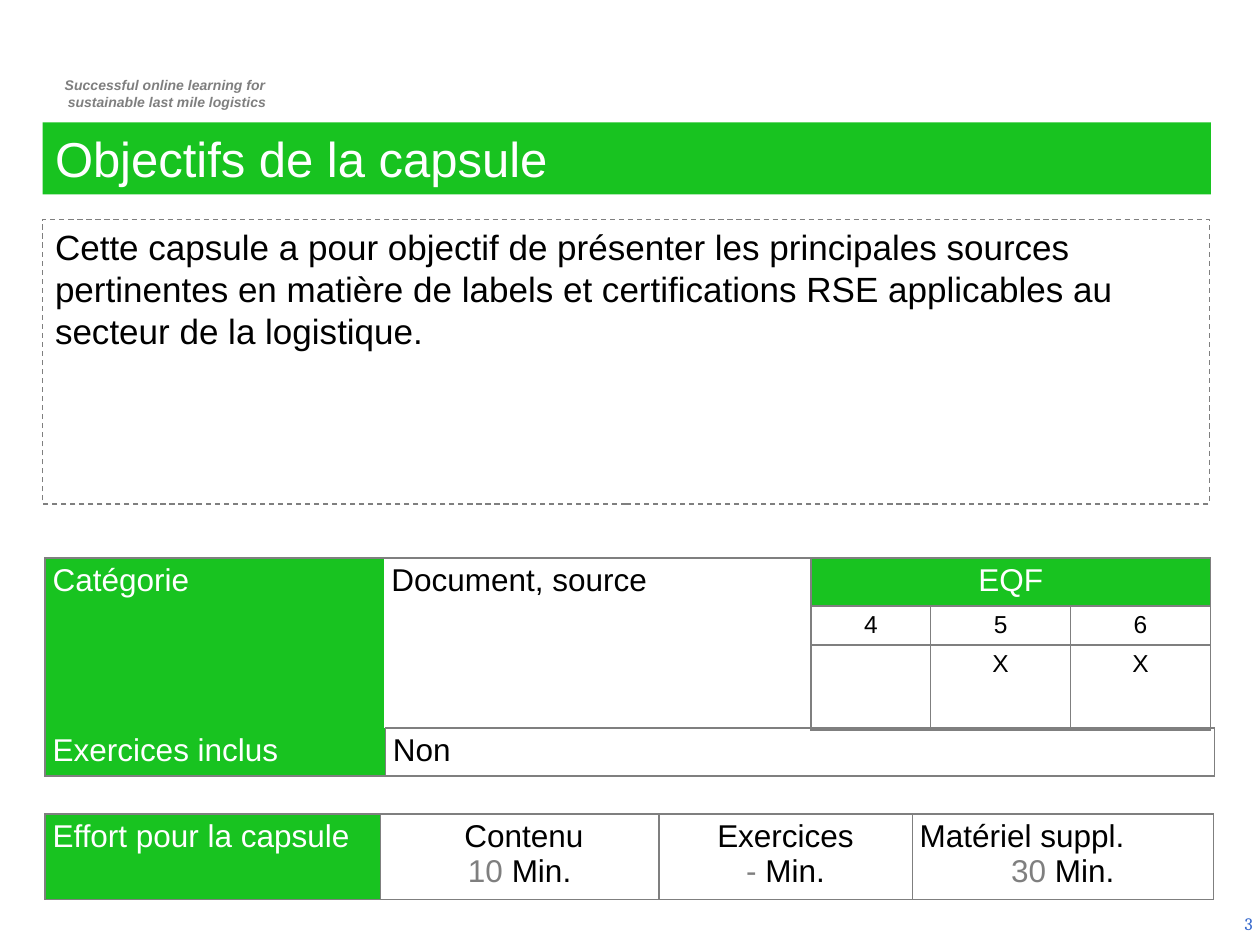
import dataclasses
import typing

import lxml.etree
import pptx
import pptx.dml.color
import pptx.enum.dml
import pptx.enum.shapes
import pptx.enum.text
import pptx.oxml
import pptx.oxml.ns
import pptx.util

Cm = pptx.util.Cm
Align = pptx.enum.text.PP_ALIGN
Anchor = pptx.enum.text.MSO_ANCHOR
qn = pptx.oxml.ns.qn


@dataclasses.dataclass(frozen=True)
class Theme:
    green: str = "18C320"
    white: str = "FFFFFF"
    black: str = "000000"
    grey: str = "7F7F7F"
    blue: str = "3366CC"
    font: str = "Arial"
    number_font: str = "Cambria"
    title: float = 28
    body: float = 20
    table: float = 18
    level: float = 14
    number: float = 10
    motto: float = 8
    plain_table: str = "{2D5ABB26-0587-4C30-8999-92F81FD0307C}"


THEME = Theme()


class Span(typing.NamedTuple):
    text: str
    color: str


class Line(typing.NamedTuple):
    spans: list[Span]
    align: Align = Align.CENTER


@dataclasses.dataclass
class Entry:
    row: int
    column: int
    lines: list[Line]
    size: float = THEME.table
    fill: str | None = None
    borders: str = "LRTB"
    row_span: int = 1
    column_span: int = 1


def rgb(value: str) -> pptx.dml.color.RGBColor:
    return pptx.dml.color.RGBColor.from_string(value)


def line(text: str, color: str = THEME.black, align: Align = Align.CENTER) -> Line:
    return Line([Span(text, color)], align)


def write(frame, lines: list[Line], *, size: float, font: str = THEME.font,
          bold: bool = False, italic: bool = False) -> None:
    """Fill a text frame with formatted paragraphs."""
    for index, item in enumerate(lines):
        para = frame.paragraphs[0] if index == 0 else frame.add_paragraph()
        para.alignment = item.align
        for part in item.spans:
            span = para.add_run()
            span.text = part.text
            span.font.name, span.font.size = font, pptx.util.Pt(size)
            span.font.bold, span.font.italic = bold, italic
            span.font.color.rgb = rgb(part.color)


def add_text_box(page, left: float, top: float, width: float, height: float,
                 lines: list[Line], anchor: Anchor = Anchor.TOP, **style) -> None:
    box = page.shapes.add_textbox(Cm(left), Cm(top), Cm(width), Cm(height))
    box.text_frame.word_wrap = True
    box.text_frame.vertical_anchor = anchor
    write(box.text_frame, lines, **style)


def add_panel(page, left: float, top: float, width: float, height: float,
              lines: list[Line], fill: str | None = None, **style) -> None:
    """Draw a filled rectangle, or a dashed outline when no fill is given."""
    box = page.shapes.add_shape(pptx.enum.shapes.MSO_SHAPE.RECTANGLE,
                                Cm(left), Cm(top), Cm(width), Cm(height))
    box.shadow.inherit = False
    if fill:
        box.fill.solid()
        box.fill.fore_color.rgb = rgb(fill)
        box.line.fill.background()
    else:
        box.fill.background()
        box.line.color.rgb = rgb(THEME.grey)
        box.line.width = pptx.util.Pt(0.75)
        box.line.dash_style = pptx.enum.dml.MSO_LINE.DASH
    box.text_frame.word_wrap = True
    box.text_frame.vertical_anchor = Anchor.TOP
    write(box.text_frame, lines, **style)


def draw_borders(cell, sides: str) -> None:
    properties = cell._tc.get_or_add_tcPr()
    for side in "LRTB":
        edge = lxml.etree.SubElement(properties, qn(f"a:ln{side}"), w="12700")
        if side in sides:
            solid = lxml.etree.SubElement(edge, qn("a:solidFill"))
            lxml.etree.SubElement(solid, qn("a:srgbClr"), val=THEME.grey)
        else:
            lxml.etree.SubElement(edge, qn("a:noFill"))


def add_grid(page, top: float, columns: list[float], rows: list[float],
             entries: list[Entry]) -> None:
    """Draw a table with its left edge on the common margin."""
    table = page.shapes.add_table(len(rows), len(columns), Cm(0.91), Cm(top),
                                  Cm(sum(columns)), Cm(sum(rows))).table
    table.first_row = table.horz_banding = False
    table._tbl.tblPr.find(qn("a:tableStyleId")).text = THEME.plain_table
    for column, width in zip(table.columns, columns):
        column.width = Cm(width)
    for row, height in zip(table.rows, rows):
        row.height = Cm(height)
    for entry in entries:
        cell = table.cell(entry.row, entry.column)
        if entry.row_span > 1 or entry.column_span > 1:
            cell.merge(table.cell(entry.row + entry.row_span - 1,
                                  entry.column + entry.column_span - 1))
        cell.margin_left = cell.margin_right = Cm(0.15)
        cell.margin_top = cell.margin_bottom = Cm(0.1)
        draw_borders(cell, entry.borders)
        if entry.fill:
            cell.fill.solid()
            cell.fill.fore_color.rgb = rgb(entry.fill)
        else:
            cell.fill.background()
        write(cell.text_frame, entry.lines, size=entry.size)


def heading(text: str, **options) -> Entry:
    """First cell of a table: white on green."""
    return Entry(0, 0, [line(text, THEME.white, Align.JUSTIFY)],
                 fill=THEME.green, **options)


def minutes(value: str) -> Line:
    return Line([Span(f"{value} ", THEME.grey), Span("Min.", THEME.black)])


def main() -> None:
    deck = pptx.Presentation()
    deck.slide_width, deck.slide_height = Cm(25.4), Cm(19.05)
    page = deck.slides.add_slide(deck.slide_layouts[6])

    # Motto, page number, title and objective
    add_text_box(page, 0.79, 1.42, 5.16, 0.94,
                 [line("Successful online learning for ", THEME.grey),
                  line("sustainable last mile logistics", THEME.grey)],
                 size=THEME.motto, bold=True, italic=True)
    add_text_box(page, 19.58, 18.11, 5.92, 1.02,
                 [line("3", THEME.blue, Align.RIGHT)], Anchor.MIDDLE,
                 size=THEME.number, font=THEME.number_font)
    add_panel(page, 0.86, 2.47, 23.55, 1.45,
              [line("Objectifs de la capsule", THEME.white, Align.LEFT)],
              fill=THEME.green, size=THEME.title)
    add_panel(page, 0.86, 4.42, 23.52, 5.74,
              [line("Cette capsule a pour objectif de présenter les principales "
                    "sources pertinentes en matière de labels et certifications "
                    "RSE applicables au secteur de la logistique.",
                    align=Align.LEFT)], size=THEME.body)

    # Category and EQF levels
    levels = [("4", ""), ("5", "X"), ("6", "X")]
    marks = [Entry(row, column, [line(text)] if text else [], THEME.level)
             for column, pair in enumerate(levels, start=2)
             for row, text in enumerate(pair, start=1)]
    add_grid(page, 11.25, [6.83, 8.61, 2.41, 2.82, 2.82], [0.94, 0.79, 1.71], [
        heading("Catégorie", borders="LT", row_span=3),
        Entry(0, 1, [line("Document, source", align=Align.JUSTIFY)],
              borders="TR", row_span=3),
        Entry(0, 2, [line("EQF", THEME.white)], fill=THEME.green, column_span=3),
        *marks])

    # Exercises included
    add_grid(page, 14.68, [6.86, 16.71], [0.94], [
        heading("Exercices inclus", borders="LB"),
        Entry(0, 1, [line("Non", align=Align.JUSTIFY)])])

    # Effort
    add_grid(page, 16.41, [6.76, 5.61, 5.11, 6.07], [1.7], [
        heading("Effort pour la capsule"),
        Entry(0, 1, [line(" Contenu"), minutes("10")]),
        Entry(0, 2, [line("Exercices"), minutes("-")]),
        Entry(0, 3, [line("Matériel suppl.", align=Align.LEFT), minutes("30")])])

    deck.save("out.pptx")


if __name__ == "__main__":
    main()
